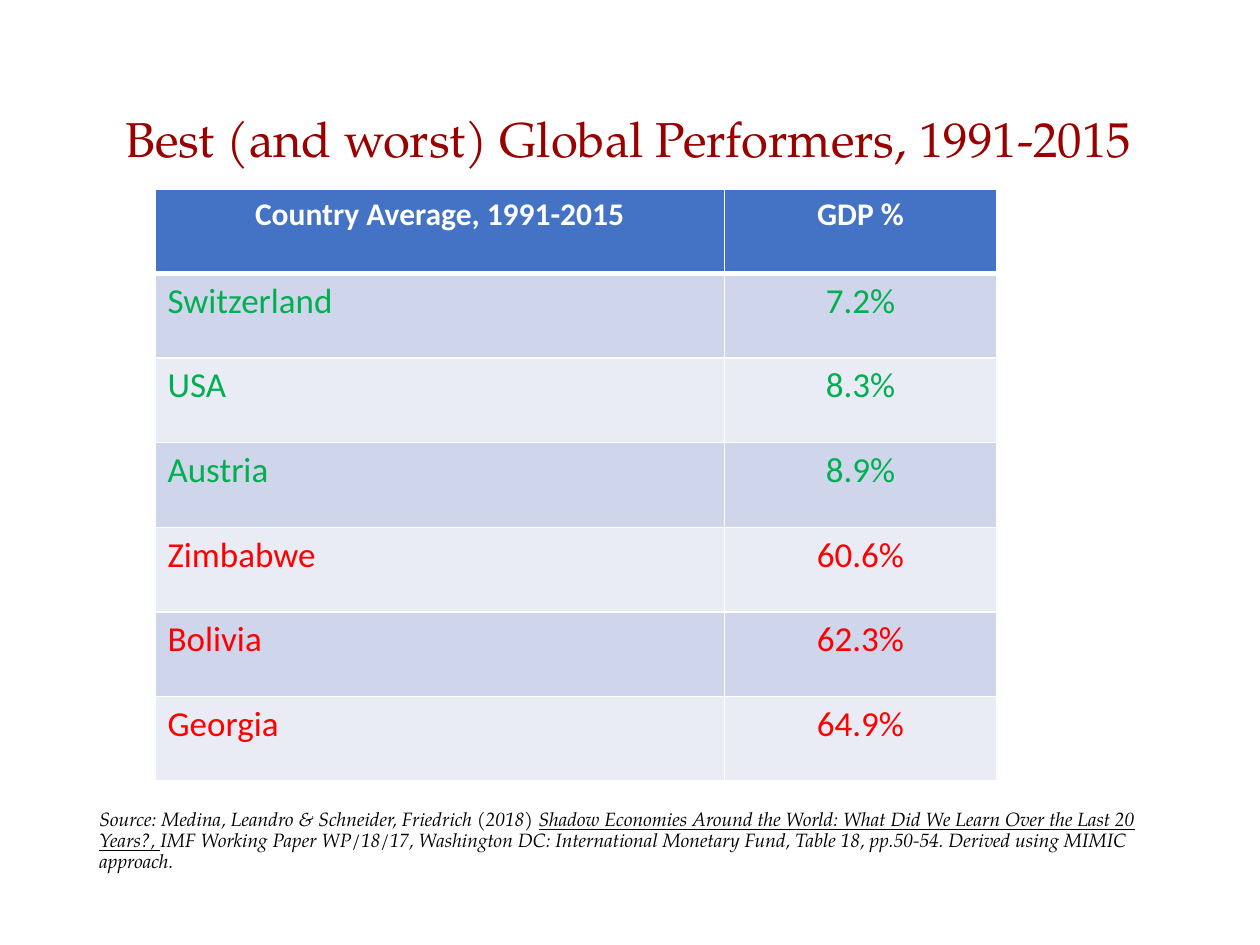
from lxml import etree
from pptx import Presentation
from pptx.dml.color import RGBColor
from pptx.enum.text import MSO_ANCHOR, PP_ALIGN
from pptx.oxml.ns import qn
from pptx.util import Inches, Pt

LEFT, CENTER = PP_ALIGN.LEFT, PP_ALIGN.CENTER
TOP, MIDDLE = MSO_ANCHOR.TOP, MSO_ANCHOR.MIDDLE
SERIF, SANS = "TeX Gyre Pagella", "Calibri"
COLORS = {
    "title": "990000", "black": "000000", "white": "FFFFFF",
    "header": "4472C4", "odd": "CFD5EA", "even": "E9EBF5",
    "best": "00B050", "worst": "FF0000",
}

TITLE = "Best (and worst) Global Performers, 1991-2015"
HEADINGS = ("Country Average, 1991-2015", "GDP %")
PERFORMERS = [
    ("Switzerland", "7.2%", "best"),
    ("USA", "8.3%", "best"),
    ("Austria", "8.9%", "best"),
    ("Zimbabwe", "60.6%", "worst"),
    ("Bolivia", "62.3%", "worst"),
    ("Georgia", "64.9%", "worst"),
]
SOURCE = [
    ("Source: Medina, Leandro & Schneider, Friedrich (2018) ", False),
    ("Shadow Economies Around the World: What Did We Learn Over the Last 20 Years?, ", True),
    ("IMF Working Paper WP/18/17, Washington DC: International Monetary Fund, "
     "Table 18, pp.50-54. Derived using MIMIC approach.", False),
]
COLUMN_WIDTHS = (4.52, 2.16)
TABLE_LEFT, TABLE_TOP, TABLE_HEIGHT = 1.23, 1.5, 4.7


def add_span(para, text, font=SANS, size=20, color="black",
             bold=False, italic=False, underline=False):
    span = para.add_run()
    span.text = text
    span.font.name = font
    span.font.size = Pt(size)
    span.font.color.rgb = RGBColor.from_string(COLORS[color])
    span.font.bold = bold
    span.font.italic = italic
    span.font.underline = underline


def add_text_box(page, left, top, width, height, anchor, align):
    box = page.shapes.add_textbox(Inches(left), Inches(top), Inches(width), Inches(height))
    box.text_frame.word_wrap = True
    box.text_frame.vertical_anchor = anchor
    para = box.text_frame.paragraphs[0]
    para.alignment = align
    para.line_spacing = 0.9
    return para


def set_borders(cell, **widths):
    properties = cell._tc.get_or_add_tcPr()
    for position, side in enumerate(("L", "R", "T", "B")):
        line = etree.Element(qn(f"a:ln{side}"), w=str(Pt(widths.get(side, 1))))
        fill = etree.SubElement(line, qn("a:solidFill"))
        etree.SubElement(fill, qn("a:srgbClr"), val=COLORS["white"])
        properties.insert(position, line)


def add_performance_table(page):
    row_count = len(PERFORMERS) + 1
    table = page.shapes.add_table(
        row_count, len(COLUMN_WIDTHS), Inches(TABLE_LEFT), Inches(TABLE_TOP),
        Inches(sum(COLUMN_WIDTHS)), Inches(TABLE_HEIGHT)).table
    for column, width in zip(table.columns, COLUMN_WIDTHS):
        column.width = Inches(width)
    for row in table.rows:
        row.height = Inches(TABLE_HEIGHT / row_count)
    for row_index, (*texts, color) in enumerate([(*HEADINGS, "white"), *PERFORMERS]):
        is_header = row_index == 0
        fill = "header" if is_header else ("even", "odd")[row_index % 2]
        for column_index, text in enumerate(texts):
            cell = table.cell(row_index, column_index)
            cell.fill.solid()
            cell.fill.fore_color.rgb = RGBColor.from_string(COLORS[fill])
            set_borders(cell, B=3 if is_header else 1, T=3 if row_index == 1 else 1)
            para = cell.text_frame.paragraphs[0]
            para.alignment = CENTER if is_header or column_index else LEFT
            add_span(para, text, size=18 if is_header else 20, color=color, bold=is_header)


def main():
    deck = Presentation()
    deck.slide_width, deck.slide_height = Inches(10), Inches(7.5)
    page = deck.slides.add_slide(deck.slide_layouts[6])

    title = add_text_box(page, 0.51, 0.4, 8.95, 1.45, MIDDLE, CENTER)
    add_span(title, TITLE, font=SERIF, size=28, color="title")

    add_performance_table(page)

    source = add_text_box(page, 0.69, 6.38, 8.62, 0.6, TOP, LEFT)
    for text, underline in SOURCE:
        add_span(source, text, font=SERIF, size=11, italic=True, underline=underline)

    deck.save("out.pptx")


if __name__ == "__main__":
    main()
